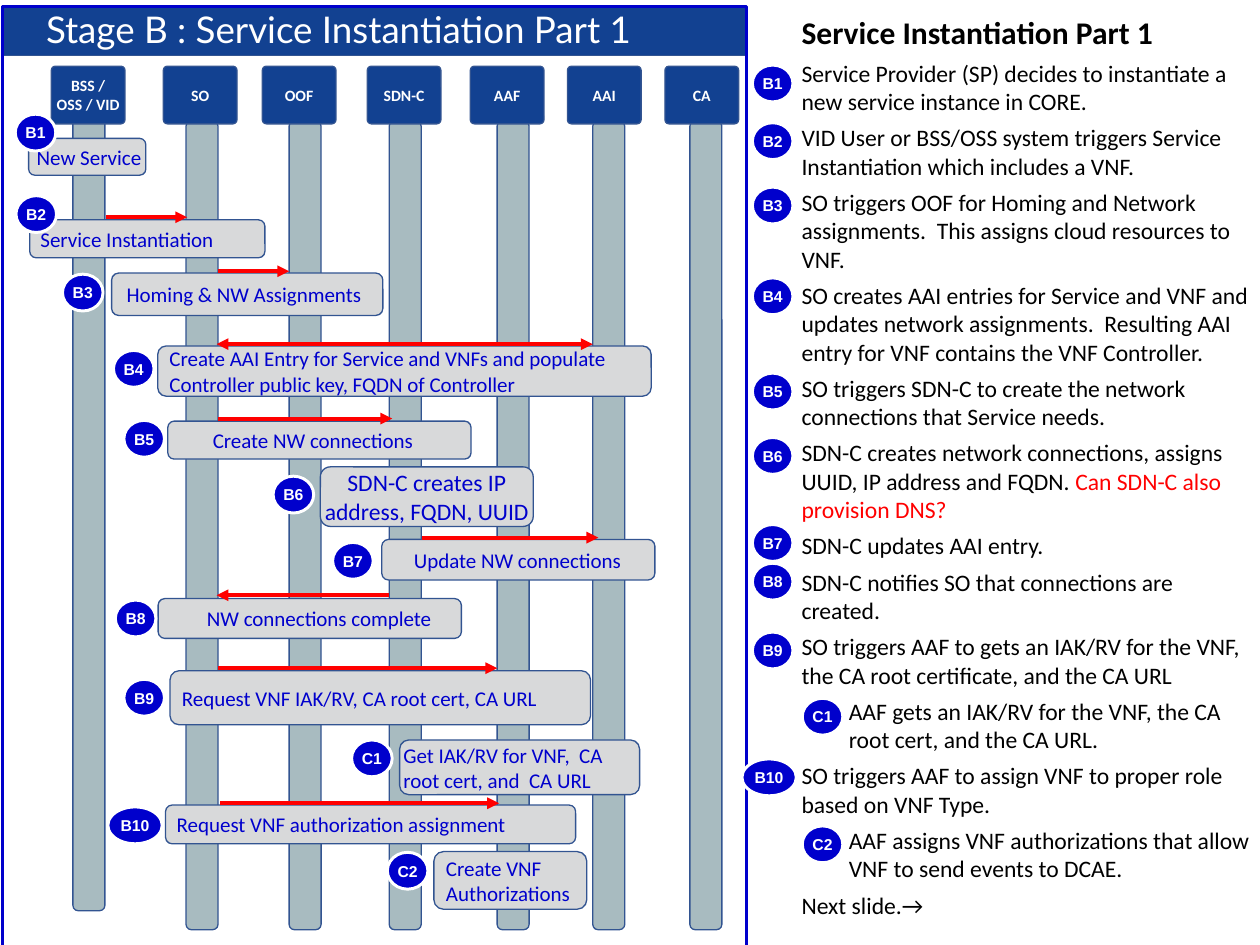
from dataclasses import dataclass

from lxml import etree
from pptx import Presentation
from pptx.dml.color import RGBColor
from pptx.enum.shapes import MSO_CONNECTOR, MSO_SHAPE
from pptx.enum.text import MSO_ANCHOR, MSO_AUTO_SIZE, PP_ALIGN
from pptx.oxml.ns import qn
from pptx.util import Cm, Pt

ROUNDED, RECT, OVAL = MSO_SHAPE.ROUNDED_RECTANGLE, MSO_SHAPE.RECTANGLE, MSO_SHAPE.OVAL
STRAIGHT = MSO_CONNECTOR.STRAIGHT
TOP, MIDDLE = MSO_ANCHOR.TOP, MSO_ANCHOR.MIDDLE
LEFT, CENTER = PP_ALIGN.LEFT, PP_ALIGN.CENTER
FIXED = MSO_AUTO_SIZE.NONE


@dataclass(frozen=True)
class Theme:
    navy: str = "124191"
    outline: str = "325491"
    lifeline: str = "A8BBC0"
    message: str = "D8D9DA"
    blue: str = "0000CC"
    red: str = "FF0000"
    white: str = "FFFFFF"
    black: str = "000000"
    title_font: str = "Lato"
    text_font: str = "Calibri"
    badge_font: str = "Arial"
    title_size: int = 28
    heading_size: int = 24
    body_size: int = 18
    message_size: int = 16
    label_size: int = 12


@dataclass(frozen=True)
class Step:
    """One message of the flow; lengths in cm, an arrow is (start, end, y)."""
    code: str
    text: str
    box: tuple
    badge: tuple
    side_top: float
    arrow: tuple = ()
    both_ways: bool = False
    indent: float = 0.25
    large: bool = False


ACTORS = [  # name, header left, lifeline left, lifeline top, lifeline height
    ("BSS / OSS / VID", 1.38, 1.96, 2.41, 22.07),
    ("SO", 4.39, 5.0, 3.25, 21.74),
    ("OOF", 7.05, 7.77, 3.25, 21.74),
    ("SDN-C", 9.87, 10.46, 3.25, 21.74),
    ("AAF", 12.64, 13.36, 3.25, 21.74),
    ("AAI", 15.25, 15.93, 3.25, 21.74),
    ("CA", 17.87, 18.54, 3.25, 21.74),
]

STEPS = [
    Step("B1", "New Service", (0.77, 3.72, 3.15, 0.99), (0.41, 3.07), 1.75, indent=0.17),
    Step("B2", "Service Instantiation", (0.8, 5.91, 6.32, 1.02), (0.43, 5.26), 3.3,
         (2.84, 5.03, 5.84), indent=0.24),
    Step("B3", "Homing & NW Assignments", (3.0, 7.34, 7.29, 1.14), (1.68, 7.37), 5.03,
         (5.87, 7.77, 7.29), indent=0.35),
    Step("B4", "Create AAI Entry for Service and VNFs and populate "
         "Controller public key, FQDN of Controller",
         (4.24, 9.3, 13.26, 1.35), (3.05, 9.42), 7.47, (5.82, 15.93, 9.25), both_ways=True),
    Step("B5", "Create NW connections", (4.51, 11.32, 8.15, 1.02), (3.33, 11.3), 10.03,
         (5.87, 10.54, 11.25), indent=1.16),
    Step("B6", "SDN-C creates IP address, FQDN, UUID", (8.61, 12.55, 5.72, 1.6),
         (7.34, 12.8), 11.76, indent=0.03, large=True),
    Step("B7", "Update NW connections", (10.26, 14.5, 7.34, 1.09), (8.94, 14.58), 14.1,
         (11.35, 16.08, 14.45), indent=0.81),
    Step("B8", "NW connections complete", (4.25, 16.09, 8.15, 1.07), (3.1, 16.13), 15.14,
         (10.46, 5.82, 16.0), indent=1.26),
    Step("B9", "Request VNF IAK/RV, CA root cert, CA URL", (4.57, 18.03, 11.3, 1.45),
         (3.33, 18.26), 16.99, (5.87, 13.36, 17.96)),
    Step("C1", "Get IAK/RV for VNF,  CA root cert, and  CA URL", (10.74, 19.89, 6.45, 1.47),
         (9.45, 19.89), 18.77, indent=0.03),
    Step("B10", "Request VNF authorization assignment", (4.45, 21.64, 11.02, 1.04),
         (2.9, 21.69), 20.4, (5.92, 13.41, 21.59)),
    Step("C2", "Create VNF Authorizations", (11.66, 22.89, 4.11, 1.55), (10.41, 22.91), 22.2),
]

EXPLANATIONS = [  # level, plain text, highlighted text
    (0, "Service Provider (SP) decides to instantiate a new service instance in CORE.", ""),
    (0, "VID User or BSS/OSS system triggers Service Instantiation which includes a VNF.", ""),
    (0, "SO triggers OOF for Homing and Network assignments.  "
        "This assigns cloud resources to VNF.", ""),
    (0, "SO creates AAI entries for Service and VNF and updates network assignments.  "
        "Resulting AAI entry for VNF contains the VNF Controller.", ""),
    (0, "SO triggers SDN-C to create the network connections that Service needs.", ""),
    (0, "SDN-C creates network connections, assigns UUID, IP address and FQDN. ",
     "Can SDN-C also provision DNS?"),
    (0, "SDN-C updates AAI entry.", ""),
    (0, "SDN-C notifies SO that connections are created.", ""),
    (0, "SO triggers AAF to gets an IAK/RV for the VNF, the CA root certificate, "
        "and the CA URL", ""),
    (1, "AAF gets an IAK/RV for the VNF, the CA root cert, and the CA URL.", ""),
    (0, "SO triggers AAF to assign VNF to proper role based on VNF Type.", ""),
    (1, "AAF assigns VNF authorizations that allow VNF to send events to DCAE.", ""),
    (0, "Next slide.→", ""),
]


class FlowSlide:
    def __init__(self, slide, theme):
        self.slide = slide
        self.theme = theme

    def place(self, element, box):
        element.left, element.top, element.width, element.height = map(Cm, box)

    def paint(self, element, fill, line, width):
        if fill:
            element.fill.solid()
            element.fill.fore_color.rgb = RGBColor.from_string(fill)
        else:
            element.fill.background()
        element.line.color.rgb = RGBColor.from_string(line)
        element.line.width = Pt(width)

    def frame_text(self, element, insets, anchor):
        """Set the insets (left, top, right, bottom in cm) and the anchor."""
        frame = element.text_frame
        frame.word_wrap, frame.auto_size, frame.vertical_anchor = True, FIXED, anchor
        (frame.margin_left, frame.margin_top,
         frame.margin_right, frame.margin_bottom) = map(Cm, insets)
        return frame

    def run(self, paragraph, text, font, size, color, bold=False):
        run = paragraph.add_run()
        run.text = text
        run.font.name, run.font.size, run.font.bold = font, Pt(size), bold
        run.font.color.rgb = RGBColor.from_string(color)

    def shape(self, kind, box, fill, line, width=1.0):
        shape = self.slide.shapes.add_shape(kind, *map(Cm, box))
        shape.shadow.inherit = False
        self.paint(shape, fill, line, width)
        return shape

    def label(self, shape, text, insets, font, size, color, bold=False, align=CENTER):
        paragraph = self.frame_text(shape, insets, MIDDLE).paragraphs[0]
        paragraph.alignment = align
        self.run(paragraph, text, font, size, color, bold)

    def title(self, text, box):
        t, title = self.theme, self.slide.shapes.title
        self.place(title, box)
        self.paint(title, t.navy, t.outline, 1)
        self.label(title, text, (0, 0, 1.96, 0.13), t.title_font, t.title_size, t.white)

    def lifeline(self, box):
        self.shape(ROUNDED, box, self.theme.lifeline, self.theme.outline)

    def header(self, name, box):
        t = self.theme
        header = self.shape(ROUNDED, box, t.navy, t.outline)
        header.adjustments[0] = 0.07
        self.label(header, name, (0.03,) * 4, t.text_font, t.label_size, t.white, True)

    def message(self, step):
        t = self.theme
        size, align = (t.body_size, CENTER) if step.large else (t.message_size, LEFT)
        box = self.shape(ROUNDED, step.box, t.message, t.outline)
        self.label(box, step.text, (step.indent, 0.03, 0.03, 0.03), t.text_font,
                   size, t.blue, align=align)

    def badge(self, code, left, top):
        t, width = self.theme, 1.46 if len(code) > 2 else 1.09
        badge = self.shape(OVAL, (left, top, width, 0.99), t.blue, t.white, 2.25)
        self.label(badge, code, (0.1,) * 4, t.badge_font, t.label_size, t.white, True)

    def arrow(self, start, end, y, both_ways):
        arrow = self.slide.shapes.add_connector(STRAIGHT, Cm(start), Cm(y), Cm(end), Cm(y))
        arrow.line.color.rgb = RGBColor.from_string(self.theme.red)
        arrow.line.width = Pt(3)
        line = arrow.line._get_or_add_ln()
        for tip in ("a:headEnd", "a:tailEnd") if both_ways else ("a:tailEnd",):
            etree.SubElement(line, qn(tip), type="triangle")
        etree.SubElement(arrow._element.spPr, qn("a:effectLst"))

    def body(self, heading, explanations, box):
        t, body = self.theme, self.slide.placeholders[1]
        self.place(body, box)
        frame = self.frame_text(body, (0.2,) * 4, TOP)
        first = self.plain_paragraph(frame.paragraphs[0], 0)
        self.run(first, heading, t.text_font, t.heading_size, t.black, True)
        for level, plain, highlighted in explanations:
            paragraph = self.plain_paragraph(frame.add_paragraph(), level)
            self.run(paragraph, plain, t.text_font, t.body_size, t.black)
            if highlighted:
                self.run(paragraph, highlighted, t.text_font, t.body_size, t.red)

    def plain_paragraph(self, paragraph, level):
        """Strip the template's bullet and indent, then space the paragraph."""
        paragraph.level, paragraph.alignment = level, LEFT
        paragraph.space_before, paragraph.space_after = Pt(0), Pt(6)
        properties = paragraph._p.get_or_add_pPr()
        properties.set("marL", str(Cm(1.27 * level)))
        properties.set("indent", "0")
        etree.SubElement(properties, qn("a:buNone"))
        return paragraph


def main():
    deck = Presentation()
    deck.slide_width, deck.slide_height = Cm(33.86), Cm(25.4)
    theme = Theme()
    flow = FlowSlide(deck.slides.add_slide(deck.slide_layouts[1]), theme)

    flow.title("Stage B : Service Instantiation Part 1", (0.08, 0.18, 19.99, 1.32))
    flow.body("Service Instantiation Part 1", EXPLANATIONS, (21.34, 0.15, 12.55, 24.99))
    flow.shape(RECT, (0.08, 0.18, 19.99, 25.37), None, theme.blue, 2.25)

    for name, header_left, left, top, height in ACTORS:
        flow.lifeline((left, top, 0.86, height))
        flow.header(name, (header_left, 1.78, 1.98, 1.55))

    for step in STEPS:
        flow.message(step)
        if step.arrow:
            flow.arrow(*step.arrow, step.both_ways)

    for step in STEPS:
        flow.badge(step.code, *step.badge)
        side_left = 21.56 if step.code.startswith("C") else 20.22
        flow.badge(step.code, 19.94 if step.code == "B10" else side_left, step.side_top)

    deck.save("out.pptx")


if __name__ == "__main__":
    main()
